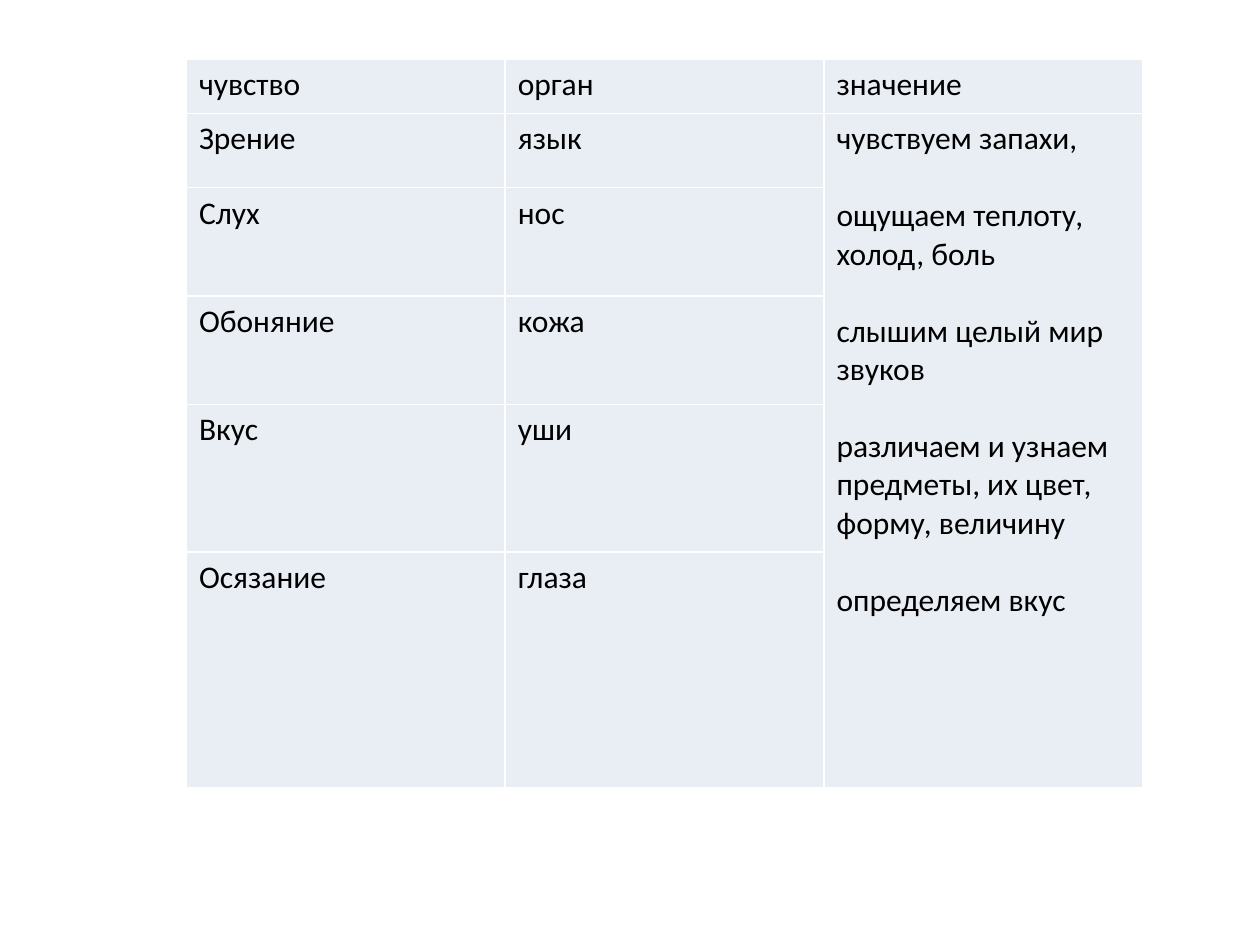
from pptx import Presentation
from pptx.dml.color import RGBColor
from pptx.oxml.ns import qn
from pptx.util import Inches, Pt
from lxml import etree

HEADER = ["чувство", "орган", "значение"]
SENSES = [("Зрение", "язык"), ("Слух", "нос"), ("Обоняние", "кожа"),
          ("Вкус", "уши"), ("Осязание", "глаза")]
MEANINGS = ["чувствуем запахи,", "ощущаем теплоту, холод, боль",
            "слышим целый мир звуков",
            "различаем и узнаем предметы, их цвет, форму, величину",
            "определяем вкус"]
COL_WIDTH = 2.53
ROW_HEIGHTS = [0.43, 0.59, 0.86, 0.86, 1.17, 1.87]


def rgb(value):
    return RGBColor.from_string(value)


class SlideBuilder:
    font, size = "Calibri", 18
    ink, cell_fill, border = "000000", "E9EDF4", "FFFFFF"
    gap = 22  # one line of text between paragraphs

    def __init__(self, prs):
        self.s = prs.slides.add_slide(prs.slide_layouts[6])

    def table(self, left, top, col_widths, row_heights):
        frame = self.s.shapes.add_table(
            len(row_heights), len(col_widths), Inches(left), Inches(top),
            Inches(sum(col_widths)), Inches(sum(row_heights)))
        table = frame.table
        table.first_row = table.horz_banding = False
        for col, width in zip(table.columns, col_widths):
            col.width = Inches(width)
        for row, height in zip(table.rows, row_heights):
            row.height = Inches(height)
        for cell in table.iter_cells():
            self.cell_style(cell)
        return table

    def cell_style(self, cell):
        props = cell._tc.get_or_add_tcPr()
        for side in ("a:lnL", "a:lnR", "a:lnT", "a:lnB"):
            line = etree.SubElement(props, qn(side), w=str(Pt(1)))
            fill = etree.SubElement(line, qn("a:solidFill"))
            etree.SubElement(fill, qn("a:srgbClr"), val=self.border)
        cell.fill.solid()
        cell.fill.fore_color.rgb = rgb(self.cell_fill)

    def cell_text(self, cell, *paragraphs):
        tf = cell.text_frame
        for i, words in enumerate(paragraphs):
            p = tf.add_paragraph() if i else tf.paragraphs[0]
            p.text = words
            p.font.name, p.font.size = self.font, Pt(self.size)
            p.font.color.rgb = rgb(self.ink)
            if i:
                p.space_before = Pt(self.gap)


def main():
    prs = Presentation()
    prs.slide_width, prs.slide_height = Inches(10), Inches(7.5)
    builder = SlideBuilder(prs)
    table = builder.table(1.48, 0.47, [COL_WIDTH] * len(HEADER), ROW_HEIGHTS)
    table.cell(1, 2).merge(table.cell(len(SENSES), 2))
    for r, row in enumerate([HEADER, *SENSES]):
        for c, words in enumerate(row):
            builder.cell_text(table.cell(r, c), words)
    builder.cell_text(table.cell(1, 2), *MEANINGS)
    prs.save("out.pptx")


if __name__ == "__main__":
    main()
